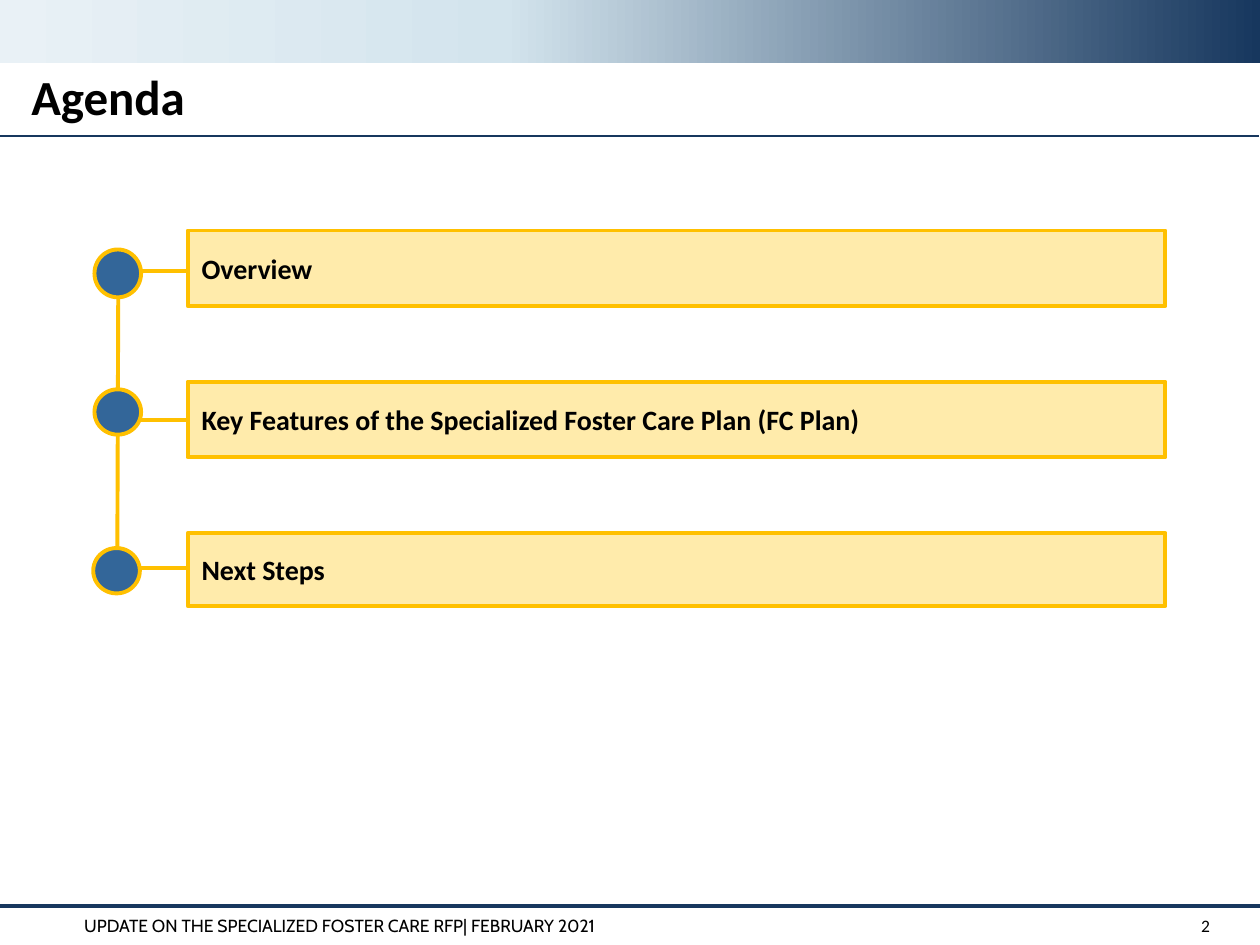
from copy import deepcopy

from lxml import etree
from pptx import Presentation
from pptx.dml.color import RGBColor
from pptx.enum import shapes, text
from pptx.oxml.ns import qn
from pptx.util import Inches, Pt

NAVY = RGBColor(0x17, 0x37, 0x5E)
SKY = RGBColor(0xD3, 0xE4, 0xED)
PALE = RGBColor(0xE9, 0xF1, 0xF6)
GOLD = RGBColor(0xFF, 0xC0, 0x00)
CREAM = RGBColor(0xFF, 0xEB, 0xAB)
BLUE = RGBColor(0x33, 0x66, 0x99)
BLACK = RGBColor(0, 0, 0)

deck = Presentation()
deck.slide_width, deck.slide_height = Inches(10), Inches(7.5)
slide = deck.slides.add_slide(deck.slide_layouts[6])
parts = slide.shapes


def write(words, box, kind=None, fill=None, size=16, bold=False, font="Calibri",
          align=text.PP_ALIGN.LEFT, anchor=text.MSO_ANCHOR.MIDDLE,
          inset=(0.1, 0.05), space=None):
    """Add a text box, or a gold-edged shape if kind is given, with its text."""
    at = [Inches(v) for v in box]
    if kind is None:
        item = parts.add_textbox(*at)
    else:
        item = parts.add_shape(kind, *at)
        item.shadow.inherit = False
        item.fill.solid()
        item.fill.fore_color.rgb = fill
        item.line.color.rgb = GOLD
        item.line.width = Pt(2.25)
    if not words:
        return
    frame = item.text_frame
    frame.word_wrap = True
    frame.vertical_anchor = anchor
    frame.margin_left = frame.margin_right = Inches(inset[0])
    frame.margin_top = frame.margin_bottom = Inches(inset[1])
    para = frame.paragraphs[0]
    para.alignment = align
    para.line_spacing = space
    run = para.add_run()
    run.text = words
    run.font.name, run.font.size, run.font.bold = font, Pt(size), bold
    run.font.color.rgb = BLACK


def draw(x1, y1, x2, y2, color=GOLD, width=2.25):
    line = parts.add_connector(shapes.MSO_CONNECTOR.STRAIGHT,
                               *[Inches(v) for v in (x1, y1, x2, y2)])
    line.line.color.rgb = color
    line.line.width = Pt(width)
    etree.SubElement(line._element.spPr, qn("a:effectLst"))


# Header band
band = parts.add_shape(shapes.MSO_SHAPE.RECTANGLE, 0, 0, Inches(10), Inches(0.5))
band.shadow.inherit = False
band.line.fill.background()
band.fill.gradient()
band.fill.gradient_angle = 180
stops = band._element.spPr.find(qn("a:gradFill")).find(qn("a:gsLst"))
stops.insert(1, deepcopy(stops[0]))
for stop, spot, color in zip(band.fill.gradient_stops, (0, 0.6, 1), (NAVY, SKY, PALE)):
    stop.position = spot
    stop.color.rgb = color

draw(0, 7.19, 10, 7.19, NAVY)
write("Agenda", (0.15, 0.53, 9.7, 0.6), size=28, bold=True,
      anchor=text.MSO_ANCHOR.TOP, space=0.9)
draw(0, 1.08, 9.99, 1.08, NAVY, 1.5)

# Agenda items: label, box top and height, dot left, top and height, link height
draw(0.93, 4.72, 0.94, 1.98)
items = [
    ("Overview", 1.83, 0.6, 0.75, 1.98, 0.38, 2.15),
    ("Key Features of the Specialized Foster Care Plan (FC Plan)",
     3.03, 0.6, 0.75, 3.09, 0.36, 3.33),
    ("Next Steps", 4.23, 0.58, 0.74, 4.35, 0.36, 4.51),
]
for label, top, high, left, dot, tall, mid in items:
    draw(0.97, mid, 1.65, mid)
    write(label, (1.49, top, 7.76, high), shapes.MSO_SHAPE.RECTANGLE, CREAM,
          bold=True, inset=(0.11, 0.06))
    write("", (left, dot, 0.37, tall), shapes.MSO_SHAPE.OVAL, BLUE)

# Footer
write("2", (9.08, 7.19, 0.62, 0.31), size=10, align=text.PP_ALIGN.RIGHT)
write("UPDATE ON THE SPECIALIZED FOSTER CARE RFP| FEBRUARY 2021",
      (0.57, 7.19, 8.4, 0.31), size=10, font="Cabin")

deck.save("out.pptx")
